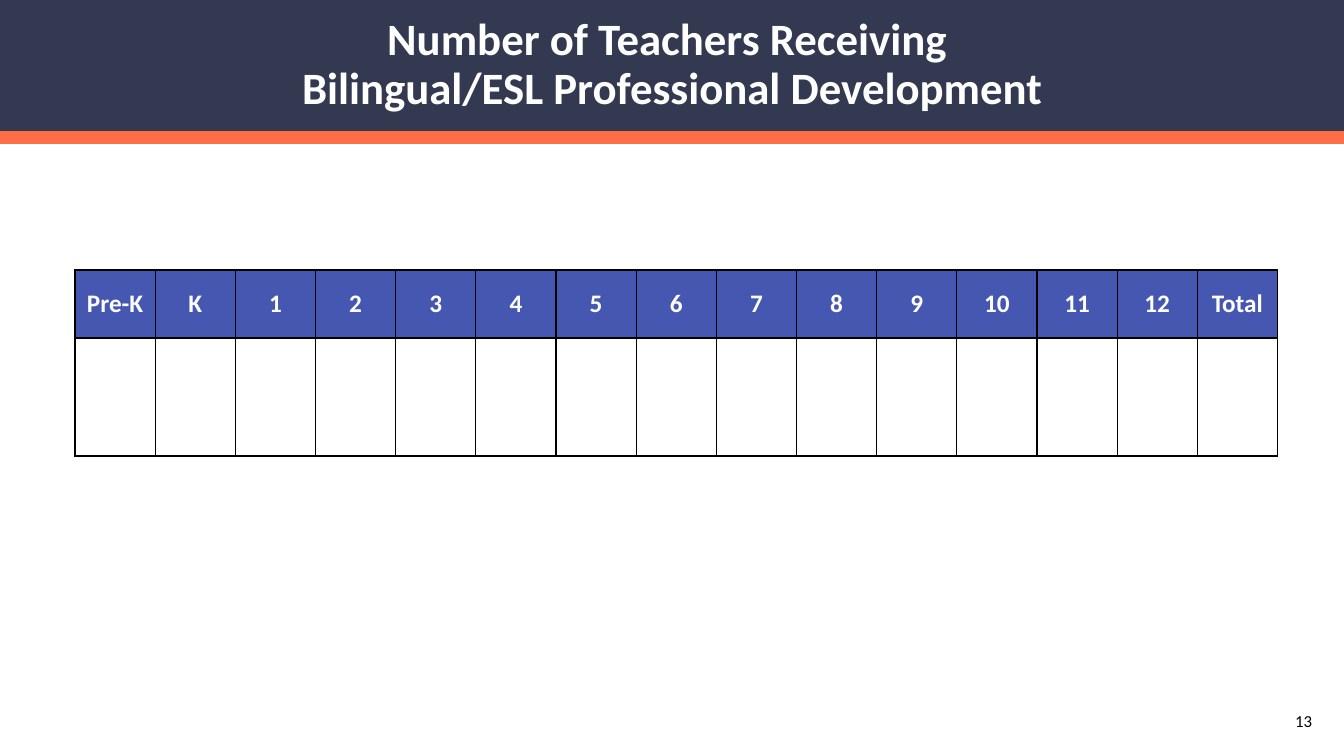
from lxml import etree
from pptx import Presentation
from pptx.dml.color import RGBColor
from pptx.enum.shapes import MSO_SHAPE
from pptx.enum.text import MSO_ANCHOR, MSO_AUTO_SIZE, PP_ALIGN
from pptx.oxml import parse_xml
from pptx.oxml.ns import nsdecls
from pptx.util import Pt

PX = 914400 / 100.8
NAVY = RGBColor(0x33, 0x39, 0x51)
ORANGE = RGBColor(0xFF, 0x6E, 0x46)
BLUE = RGBColor(0x46, 0x57, 0xB1)
WHITE = RGBColor(0xFF, 0xFF, 0xFF)
BLACK = RGBColor(0, 0, 0)


def px(*lengths):
    return [round(n * PX) for n in lengths]


def style(p, size, color, align, bold=False):
    p.alignment = align
    p.font.name = "Calibri"
    p.font.size = Pt(size)
    p.font.bold = bold
    p.font.color.rgb = color


prs = Presentation()
prs.slide_width, prs.slide_height = px(1344, 756)
s = prs.slides.add_slide(prs.slide_layouts[5])
title = s.shapes.title

# Header bands, behind the title
for top, height, color in ((88, 56, ORANGE), (0, 131, NAVY)):
    band = s.shapes.add_shape(MSO_SHAPE.RECTANGLE, *px(0, top, 1344, height))
    band.shadow.inherit = False
    band.fill.solid()
    band.fill.fore_color.rgb = color
    band.line.fill.background()
    title.element.addprevious(band.element)

# Title
title.left, title.top, title.width, title.height = px(93, 0, 1159, 131)
tf = title.text_frame
tf.word_wrap = True
tf.auto_size = MSO_AUTO_SIZE.NONE
tf.vertical_anchor = MSO_ANCHOR.MIDDLE
tf.text = "Number of Teachers Receiving \vBilingual/ESL Professional Development"
p = tf.paragraphs[0]
p.line_spacing = 0.9
style(p, 32, WHITE, PP_ALIGN.CENTER, bold=True)

# Table of grades: header row and an empty row to fill in
grades = ["Pre-K", "K", *map(str, range(1, 13)), "Total"]
table = s.shapes.add_table(2, len(grades), *px(75, 270, 1203, 186)).table
for row, height in zip(table.rows, px(68, 118)):
    row.height = height

for col, grade in enumerate(grades):
    for row, (text, fill) in enumerate(((grade, BLUE), ("", WHITE))):
        cell = table.cell(row, col)
        cell.text = text
        cell.vertical_anchor = MSO_ANCHOR.MIDDLE
        style(cell.text_frame.paragraphs[0], 18, WHITE if row == 0 else BLACK,
              PP_ALIGN.CENTER, bold=row == 0)
        cell.fill.solid()
        cell.fill.fore_color.rgb = fill
        # Borders come before the fill in the cell properties
        tc_pr = cell._tc.get_or_add_tcPr()
        for i, side in enumerate(("lnL", "lnR", "lnT", "lnB")):
            tc_pr.insert(i, parse_xml(
                f'<a:{side} {nsdecls("a")} w="{Pt(1)}"><a:solidFill>'
                f'<a:srgbClr val="{BLACK}"/></a:solidFill></a:{side}>'))

# Page number
number = s.shapes.add_textbox(*px(1020, 701, 302, 40))
tf = number.text_frame
tf.word_wrap = True
tf.vertical_anchor = MSO_ANCHOR.MIDDLE
tf.text = "13"
style(tf.paragraphs[0], 12, BLACK, PP_ALIGN.RIGHT)

prs.save("out.pptx")
